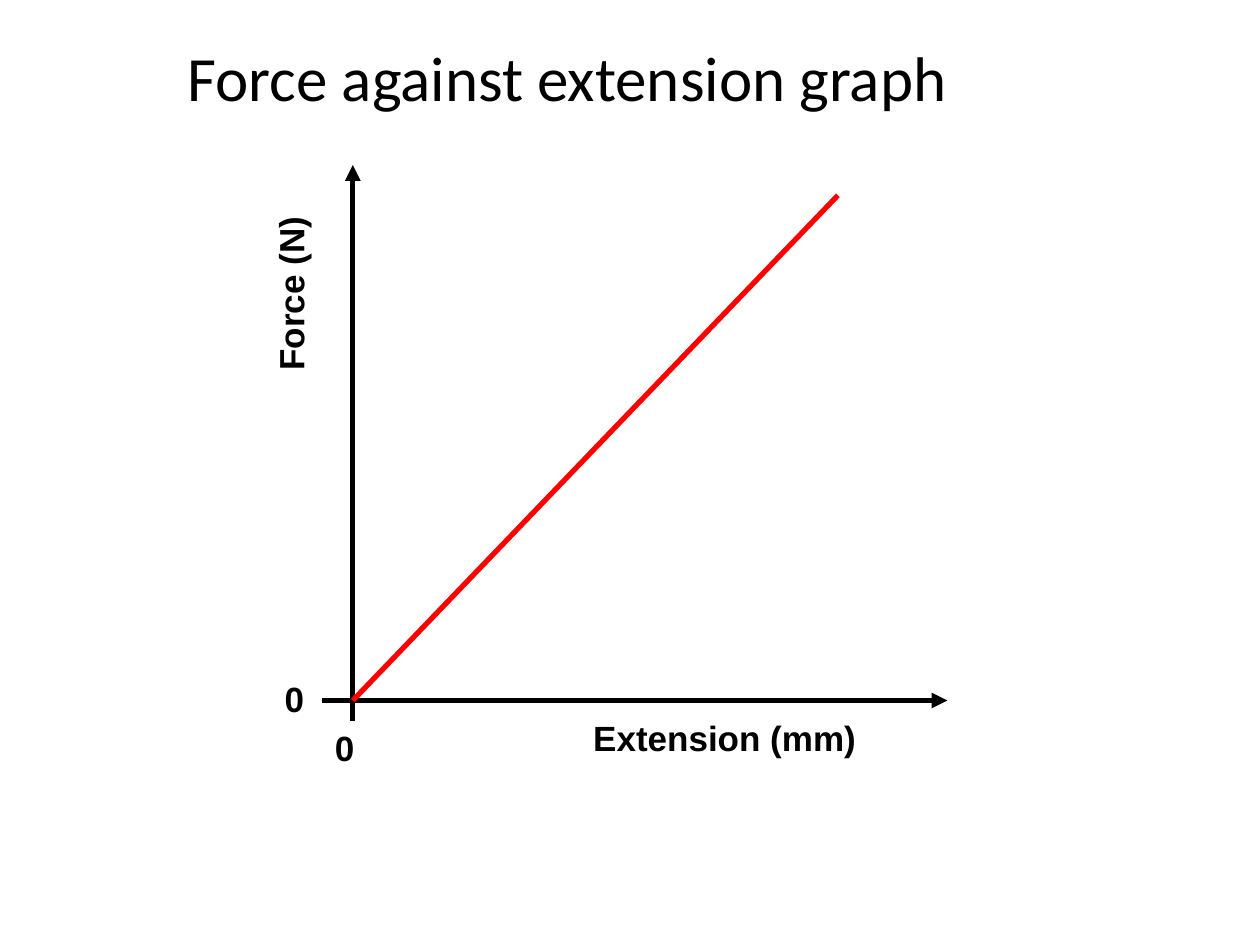
from lxml import etree
from pptx import Presentation
from pptx.dml.color import RGBColor
from pptx.enum.shapes import MSO_CONNECTOR
from pptx.enum.text import MSO_ANCHOR, MSO_AUTO_SIZE, PP_ALIGN
from pptx.oxml.ns import qn
from pptx.util import Pt

STRAIGHT = MSO_CONNECTOR.STRAIGHT
MIDDLE = MSO_ANCHOR.MIDDLE
FIT_SHAPE = MSO_AUTO_SIZE.SHAPE_TO_FIT_TEXT
CENTER = PP_ALIGN.CENTER

BLACK = RGBColor(0, 0, 0)
RED = RGBColor(255, 0, 0)

TITLE_FONT = {"name": "Calibri", "size": Pt(36), "bold": False}
LABEL_FONT = {"name": "Arial", "size": Pt(20), "bold": True}

# Point where the axes cross
ORIGIN_X, ORIGIN_Y = 201.6, 400.3
LABEL_HEIGHT = 31


def format_font(font, values):
    for attribute, value in values.items():
        setattr(font, attribute, value)
    font.color.rgb = BLACK


def set_title(slide, text):
    title = slide.shapes.title
    title.left, title.top, title.width, title.height = Pt(0), Pt(21.6), Pt(648), Pt(44)
    frame = title.text_frame
    frame.text = text
    frame.vertical_anchor = MIDDLE
    heading = frame.paragraphs[0]
    heading.alignment = CENTER
    format_font(heading.runs[0].font, TITLE_FONT)


def add_line(slide, start, end, color, arrow=False):
    line = slide.shapes.add_connector(STRAIGHT, *map(Pt, start + end))
    line.line.color.rgb = color
    line.line.width = Pt(3)
    properties = line._element.spPr
    if arrow:
        etree.SubElement(properties.find(qn("a:ln")), qn("a:tailEnd"), type="triangle")
    etree.SubElement(properties, qn("a:effectLst"))


def add_label(slide, text, left, top, width, rotation=0):
    label = slide.shapes.add_textbox(Pt(left), Pt(top), Pt(width), Pt(LABEL_HEIGHT))
    label.rotation = rotation
    frame = label.text_frame
    frame.word_wrap = True
    frame.auto_size = FIT_SHAPE
    frame.text = text
    format_font(frame.paragraphs[0].runs[0].font, LABEL_FONT)


def main():
    deck = Presentation()
    deck.slide_width, deck.slide_height = Pt(720), Pt(540)
    slide = deck.slides.add_slide(deck.slide_layouts[5])
    set_title(slide, "Force against extension graph")

    # Axes
    add_line(slide, (ORIGIN_X, 411.8), (ORIGIN_X, 94.3), BLACK, arrow=True)
    add_line(slide, (184.3, ORIGIN_Y), (541.4, ORIGIN_Y), BLACK, arrow=True)

    # Zero marks and axis names
    add_label(slide, "0", 184.3, 411.8, 39.6)
    add_label(slide, "Force (N)", 109.4, 146.9, 113, rotation=270)
    add_label(slide, "0", 155.5, 383.8, 39.6)
    add_label(slide, "Extension (mm)", 331.9, 406.1, 175.7)

    # Force proportional to extension
    add_line(slide, (ORIGIN_X, ORIGIN_Y), (478.8, 111.6), RED)

    deck.save("out.pptx")


if __name__ == "__main__":
    main()
